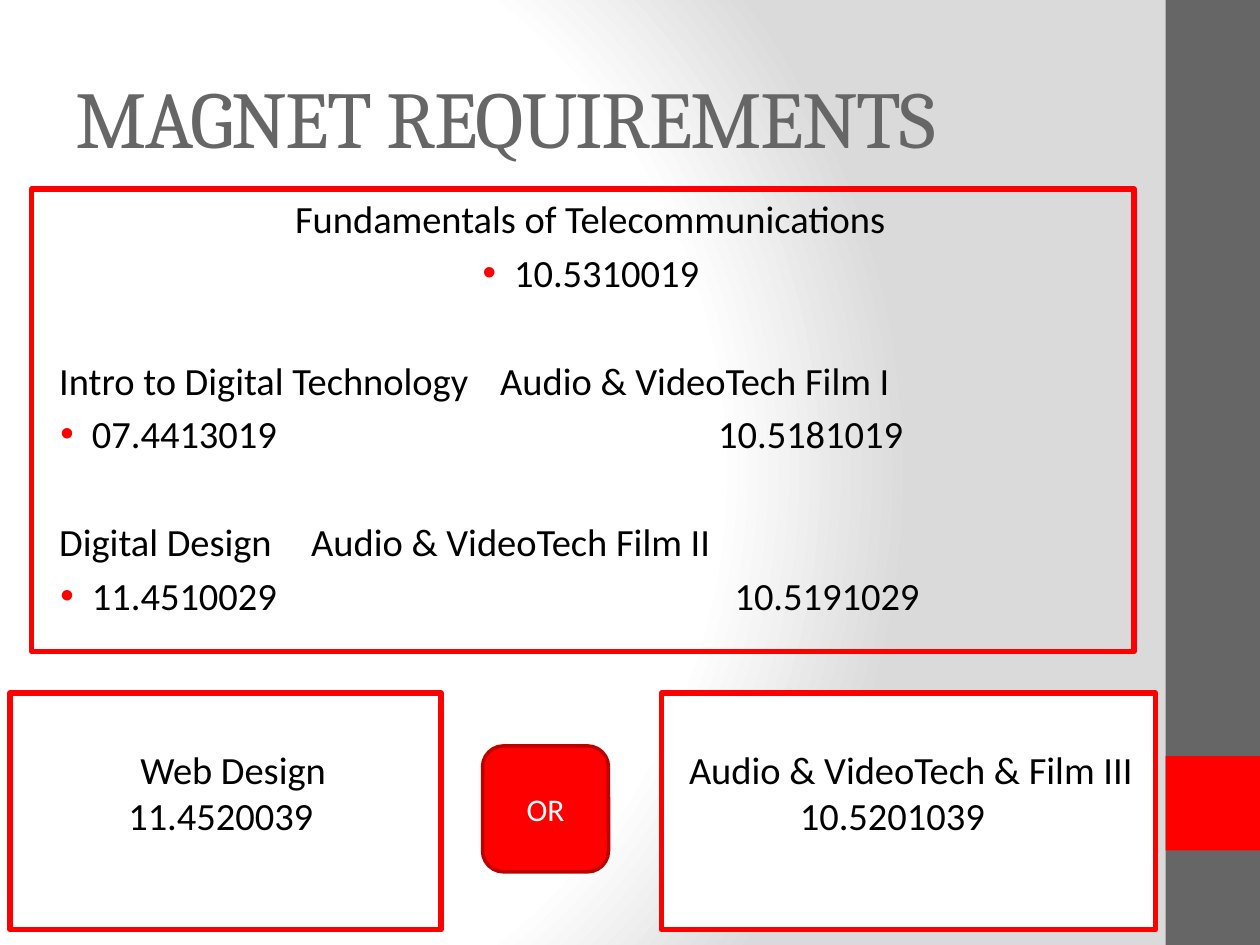
from pptx import Presentation
from pptx import util as u
from pptx.dml.color import RGBColor
from pptx.enum import shapes, text
from pptx.oxml import parse_xml
from pptx.oxml.ns import nsdecls

RED = RGBColor(0xFF, 0x00, 0x00)
DARK_RED = RGBColor(0xBD, 0x00, 0x00)
GREY = RGBColor(0x66, 0x66, 0x66)
WHITE = RGBColor(0xFF, 0xFF, 0xFF)
BLACK = RGBColor(0x00, 0x00, 0x00)
LEFT, CENTER = text.PP_ALIGN.LEFT, text.PP_ALIGN.CENTER
SHAPE = shapes.MSO_SHAPE

COURSES = [
    ("Intro to Digital Technology\tAudio & VideoTech Film I",
     "07.4413019\t10.5181019", 5.35),
    ("Digital Design\tAudio & VideoTech Film II",
     "11.4510029\t10.5191029", 5.48),
]


class SlideBuilder:
    """Holds the style and the current slide, and adds each kind of element."""

    body_font = {"name": "Calibri", "size": u.Pt(22)}
    title_font = {"name": "Cambria", "size": u.Pt(46)}

    def __init__(self, deck):
        self.page = deck.slides.add_slide(deck.slide_layouts[1])

    def background(self):
        self.page.background.fill.solid()
        props = self.page._element.cSld.bg.bgPr
        stops = "".join(
            f'<a:gs pos="{place}000"><a:srgbClr val="{color}"/></a:gs>'
            for place, color in ((0, WHITE), (75, WHITE), (100, "DADADA")))
        props.replace(props[0], parse_xml(
            f'<a:gradFill {nsdecls("a")} rotWithShape="1"><a:gsLst>{stops}</a:gsLst>'
            '<a:path path="circle"><a:fillToRect l="20000" t="50000" '
            'r="100000" b="50000"/></a:path></a:gradFill>'))

    def place(self, box, *lengths):
        for name, value in zip(("left", "top", "width", "height"), lengths):
            setattr(box, name, u.Inches(value))

    def outline(self, box, color, width):
        box.line.color.rgb = color
        box.line.width = u.Pt(width)

    def add_text(self, para, words, font, color=BLACK, align=LEFT):
        para.alignment = align
        span = para.add_run()
        span.text = words
        for name, value in font.items():
            setattr(span.font, name, value)
        span.font.color.rgb = color
        return span

    def indent(self, para, margin, hanging=0, tab=None):
        props = para._p.get_or_add_pPr()
        props.set("marL", str(u.Inches(margin)))
        props.set("indent", str(-u.Inches(hanging)))
        marks = ["<a:buNone {}/>"]
        if hanging:
            marks = [f'<a:buClr {{}}><a:srgbClr val="{RED}"/></a:buClr>',
                     '<a:buFont {} typeface="Arial"/>', '<a:buChar {} char="•"/>']
        for mark in marks:
            props.append(parse_xml(mark.format(nsdecls("a"))))
        if tab:
            props.append(parse_xml(
                f'<a:tabLst {nsdecls("a")}><a:tab pos="{u.Inches(tab)}" algn="l"/></a:tabLst>'))

    def title(self, words):
        box = self.page.shapes.title
        self.place(box, 0.5, 0.3, 8.33, 1.25)
        box.text_frame.vertical_anchor = text.MSO_ANCHOR.MIDDLE
        span = self.add_text(box.text_frame.paragraphs[0], words, self.title_font, GREY)
        span._r.get_or_add_rPr().set("spc", "-100")

    def course_list(self):
        box = self.page.placeholders[1]
        self.place(box, 0.25, 1.5, 8.75, 3.67)
        self.outline(box, RED, 3)
        frame = box.text_frame
        para = frame.paragraphs[0]
        self.add_text(para, "Fundamentals of Telecommunications", self.body_font, align=CENTER)
        self.indent(para, 0.12)
        para = frame.add_paragraph()
        self.add_text(para, "10.5310019", self.body_font, align=CENTER)
        self.indent(para, 0.38, 0.25)
        for names, codes, tab in COURSES:
            para = frame.add_paragraph()
            para.space_before = u.Pt(35)
            self.add_text(para, names, self.body_font)
            self.indent(para, 0.12, tab=5)
            para = frame.add_paragraph()
            self.add_text(para, codes, self.body_font)
            self.indent(para, 0.38, 0.25, tab)

    def block(self, kind, place, fill, line=None, width=0):
        box = self.page.shapes.add_shape(kind, *map(u.Inches, place))
        box.shadow.inherit = False
        box.fill.solid()
        box.fill.fore_color.rgb = fill
        if line is None:
            box.line.fill.background()
        else:
            self.outline(box, line, width)
        return box

    def choice(self, left, width, name, align, code, margin):
        box = self.block(SHAPE.RECTANGLE, (left, 5.5, width, 1.88), WHITE, RED, 3)
        frame = box.text_frame
        frame.word_wrap = True
        frame.vertical_anchor = text.MSO_ANCHOR.TOP
        frame.margin_top = u.Inches(0.42)
        self.add_text(frame.paragraphs[0], name, self.body_font, align=align)
        self.indent(frame.paragraphs[0], 0.12)
        para = frame.add_paragraph()
        self.add_text(para, code, self.body_font)
        self.indent(para, margin)

    def badge(self, words):
        box = self.block(SHAPE.FLOWCHART_ALTERNATE_PROCESS, (3.83, 5.92, 1, 1),
                         RED, DARK_RED, 2)
        box.text_frame.vertical_anchor = text.MSO_ANCHOR.MIDDLE
        font = {**self.body_font, "size": u.Pt(18)}
        self.add_text(box.text_frame.paragraphs[0], words, font, WHITE, CENTER)


def main():
    deck = Presentation()
    deck.slide_width, deck.slide_height = u.Inches(10), u.Inches(7.5)
    slide = SlideBuilder(deck)
    slide.background()
    slide.block(SHAPE.RECTANGLE, (9.25, 0, 0.75, 7.5), GREY)
    slide.block(SHAPE.RECTANGLE, (9.25, 6, 0.75, 0.75), RED)
    slide.title("MAGNET REQUIREMENTS")
    slide.course_list()
    slide.choice(0.08, 3.42, "Web Design", CENTER, "11.4520039", 0.84)
    slide.choice(5.25, 3.92, "Audio & VideoTech & Film III", LEFT, "10.5201039", 1)
    slide.badge("OR")
    deck.save("out.pptx")


if __name__ == "__main__":
    main()
